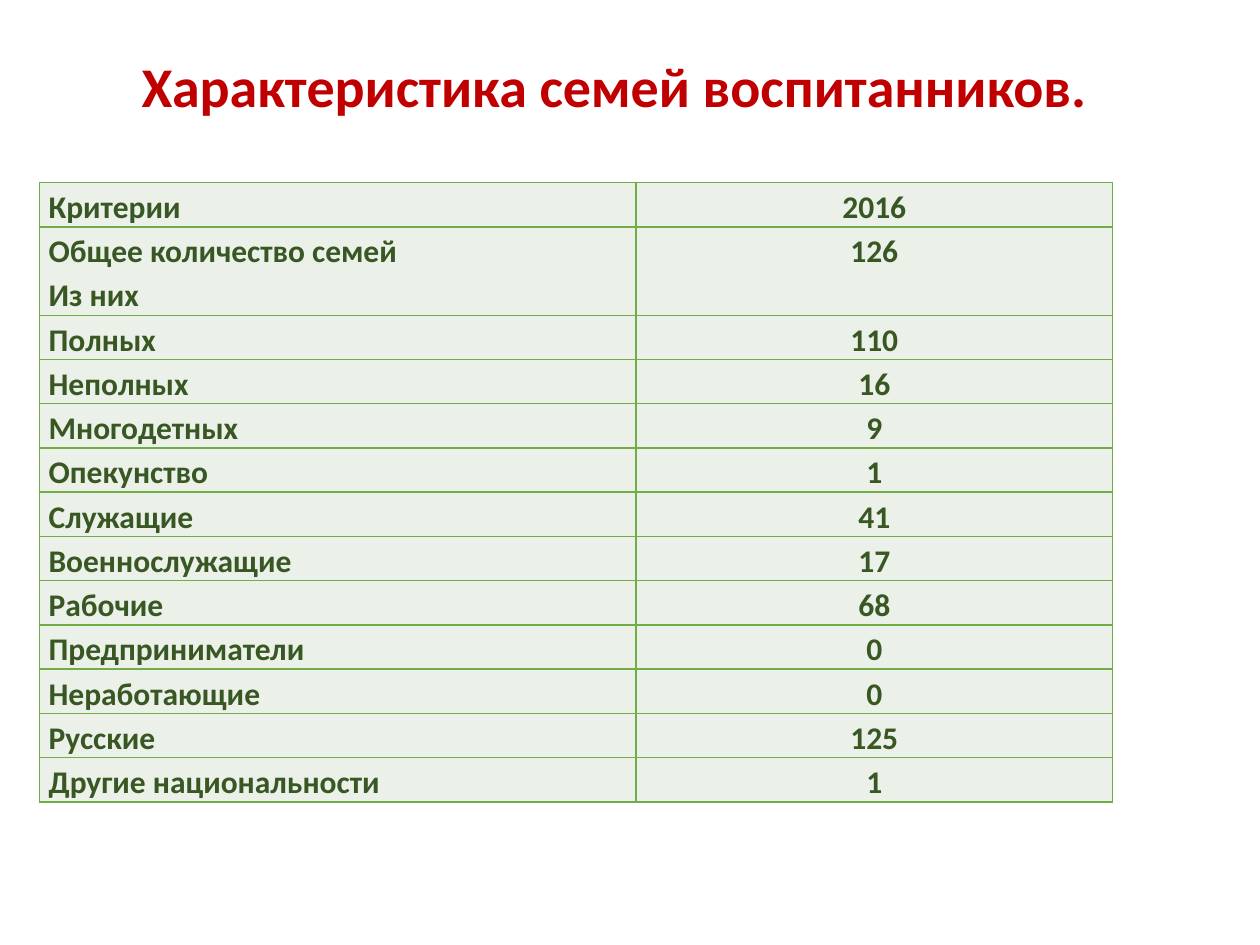
import dataclasses

import pptx
import pptx.dml.color
import pptx.enum.text
import pptx.oxml
import pptx.oxml.ns
import pptx.util

Cm = pptx.util.Cm
Pt = pptx.util.Pt
ALIGN = pptx.enum.text.PP_ALIGN
ANCHOR = pptx.enum.text.MSO_ANCHOR


@dataclasses.dataclass(frozen=True)
class Theme:
    font: str = "Calibri"
    title_color: str = "C00000"
    text_color: str = "385723"
    cell_fill: str = "EBF1E9"
    border: str = "70AD47"
    title_size: int = 32
    text_size: int = 18
    border_width: int = 1


# Each row: the lines of the criterion, then its value
FAMILIES = [
    (["Критерии"], "2016"),
    (["Общее количество семей", "Из них"], "126"),
    (["Полных"], "110"),
    (["Неполных"], "16"),
    (["Многодетных"], "9"),
    (["Опекунство"], "1"),
    (["Служащие"], "41"),
    (["Военнослужащие"], "17"),
    (["Рабочие"], "68"),
    (["Предприниматели"], "0"),
    (["Неработающие"], "0"),
    (["Русские"], "125"),
    (["Другие национальности"], "1"),
]


class SlideBuilder:
    def __init__(self, prs, theme):
        self.theme = theme
        self.s = prs.slides.add_slide(prs.slide_layouts[5])

    def add_run(self, p, text, size, color):
        r = p.add_run()
        r.text = text
        r.font.name = self.theme.font
        r.font.size = Pt(size)
        r.font.bold = True
        r.font.color.rgb = pptx.dml.color.RGBColor.from_string(color)

    def title(self, text, left, top, width, height):
        sp = self.s.shapes.title
        sp.left, sp.top, sp.width, sp.height = map(Cm, (left, top, width, height))
        tf = sp.text_frame
        tf.word_wrap = True
        tf.auto_size = pptx.enum.text.MSO_AUTO_SIZE.NONE
        tf.vertical_anchor = ANCHOR.MIDDLE
        p = tf.paragraphs[0]
        p.alignment = ALIGN.CENTER
        self.add_run(p, text, self.theme.title_size, self.theme.title_color)

    def borders(self, cell):
        tc_pr = cell._tc.get_or_add_tcPr()
        for side in ("lnL", "lnR", "lnT", "lnB"):
            tc_pr.append(pptx.oxml.parse_xml(
                f'<a:{side} {pptx.oxml.ns.nsdecls("a")} w="{Pt(self.theme.border_width)}">'
                f'<a:solidFill><a:srgbClr val="{self.theme.border}"/></a:solidFill>'
                f'</a:{side}>'))

    def cell(self, cell, lines, align):
        self.borders(cell)
        cell.fill.solid()
        cell.fill.fore_color.rgb = pptx.dml.color.RGBColor.from_string(self.theme.cell_fill)
        cell.margin_left = cell.margin_right = Cm(0.18)
        cell.margin_top = cell.margin_bottom = Cm(0)
        cell.vertical_anchor = ANCHOR.TOP
        tf = cell.text_frame
        for i, line in enumerate(lines):
            p = tf.add_paragraph() if i else tf.paragraphs[0]
            p.alignment = align
            p.line_spacing = 1.15
            self.add_run(p, line, self.theme.text_size, self.theme.text_color)

    def table(self, rows, left, top, col_widths, line_height):
        height = line_height * sum(len(lines) for lines, _ in rows)
        table = self.s.shapes.add_table(
            len(rows), len(col_widths), Cm(left), Cm(top),
            Cm(sum(col_widths)), Cm(height)).table
        table.first_row = table.horz_banding = False
        for column, width in zip(table.columns, col_widths):
            column.width = Cm(width)
        for row, (lines, value) in zip(table.rows, rows):
            row.height = Cm(line_height * len(lines))
            self.cell(row.cells[0], lines, ALIGN.LEFT)
            self.cell(row.cells[1], [value], ALIGN.CENTER)


def main():
    prs = pptx.Presentation()
    prs.slide_width, prs.slide_height = Cm(25.4), Cm(19.05)
    slide = SlideBuilder(prs, Theme())

    # Heading
    slide.title("Характеристика семей воспитанников.", 1.09, 0.91, 22.6, 1.63)

    # Family statistics
    slide.table(FAMILIES, 0.8, 3.68, (12.02, 9.61), 0.89)

    prs.save("out.pptx")


if __name__ == "__main__":
    main()
